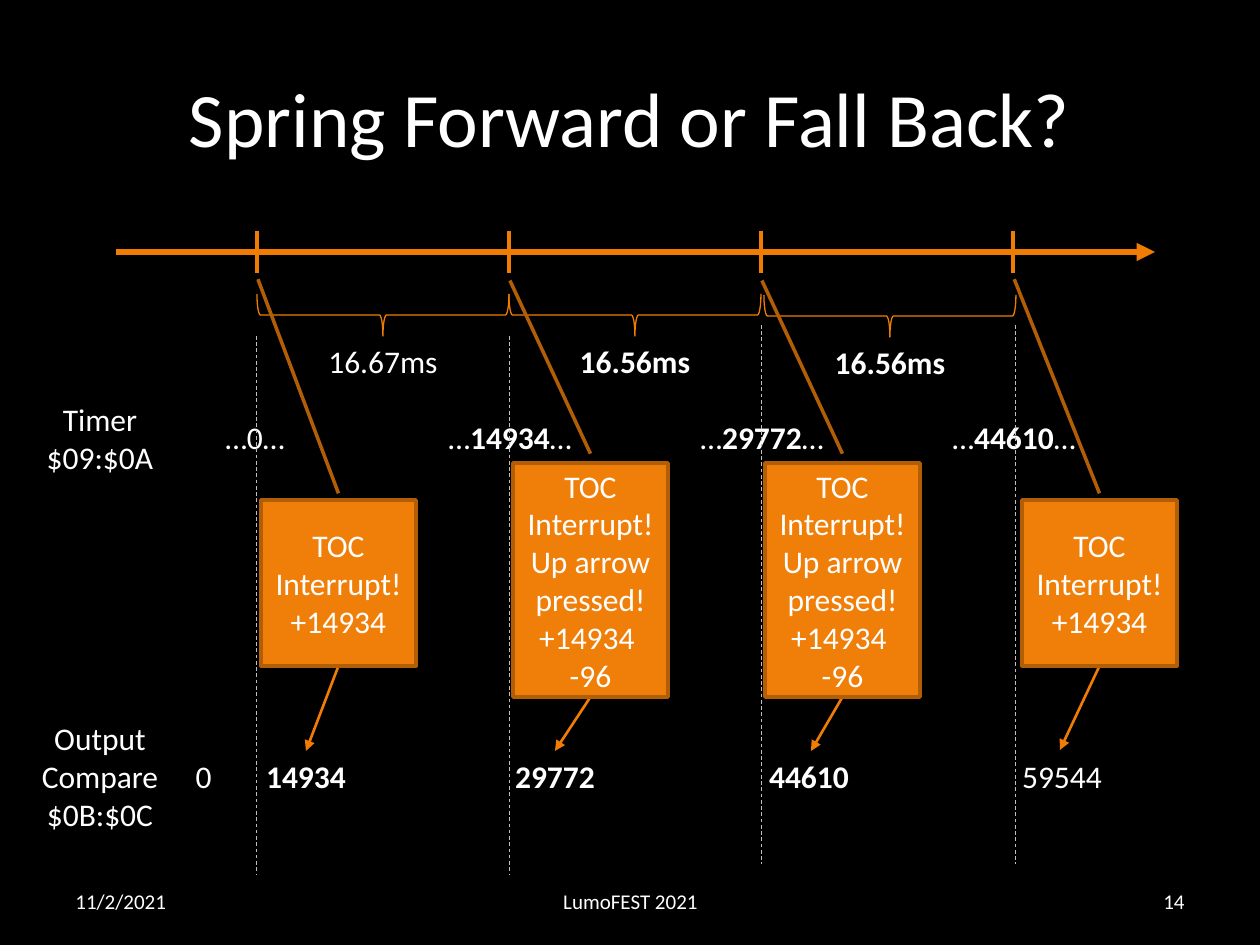
from dataclasses import dataclass

from lxml import etree
from pptx import Presentation
from pptx.dml.color import RGBColor
from pptx.enum.dml import MSO_LINE
from pptx.enum.shapes import MSO_CONNECTOR, MSO_SHAPE
from pptx.enum.text import MSO_ANCHOR, MSO_AUTO_SIZE, PP_ALIGN
from pptx.oxml.ns import qn
from pptx.util import Emu, Pt

STRAIGHT = MSO_CONNECTOR.STRAIGHT
BRACE, CALLOUT = MSO_SHAPE.LEFT_BRACE, MSO_SHAPE.LINE_CALLOUT_1
LEFT, CENTER, RIGHT = PP_ALIGN.LEFT, PP_ALIGN.CENTER, PP_ALIGN.RIGHT
TOP, MIDDLE = MSO_ANCHOR.TOP, MSO_ANCHOR.MIDDLE
DASH, GROW = MSO_LINE.DASH, MSO_AUTO_SIZE.SHAPE_TO_FIT_TEXT

EMU_PER_PX = 914400 // 126
FONT = "Calibri"
BLACK, WHITE, GUIDE_GRAY = "000000", "FFFFFF", "BFBFBF"
ORANGE, BOX_ORANGE, BOX_EDGE = "F07C03", "F07F09", "B25E07"

AXIS_Y = 252
FIRST_TICK, TICK_GAP = 257, 252
LABEL_WIDTH, LABEL_HEIGHT = 158, 50
BOX_WIDTH = 155
SHORT_TEXT = "TOC Interrupt!\v+14934"
LONG_TEXT = "TOC Interrupt! Up arrow pressed!\v+14934 \v-96"


@dataclass
class Interrupt:
    """One timer interrupt: its guide line, callout and register values."""
    guide_x: int
    guide_top: int
    timer: str
    timer_bold: str
    timer_left: int
    box: tuple[int, int, int, int]
    text: str
    leader: tuple[float, float]
    arrow_end: tuple[int, int]
    compare: str
    compare_bold: str
    compare_left: int


@dataclass
class Interval:
    """The time between two interrupts."""
    left: int
    top: int
    text: str
    bold: str


INTERRUPTS = [
    Interrupt(256, 336, "…0…", "", 176, (261, 500, BOX_WIDTH, 166), SHORT_TEXT,
              (-1.33, -0.02), (306, 751), "14934", "14934", 227),
    Interrupt(509, 336, "…14934…", "14934", 431, (513, 463, BOX_WIDTH, 234), LONG_TEXT,
              (-0.78, -0.02), (555, 751), "29772", "29772", 476),
    Interrupt(761, 325, "…29772…", "29772", 683, (765, 463, BOX_WIDTH, 234), LONG_TEXT,
              (-0.78, -0.02), (811, 751), "44610", "44610", 730),
    Interrupt(1016, 325, "…44610…", "44610", 935, (1022, 500, BOX_WIDTH, 166), SHORT_TEXT,
              (-1.33, -0.05), (1060, 750), "59544", "", 983),
]
INTERVALS = [
    Interval(257, 294, "16.67ms", ""),
    Interval(509, 294, "16.56ms", "16.56ms"),
    Interval(764, 295, "16.56ms", "16.56ms"),
]


def px(length: float) -> Emu:
    return Emu(round(length * EMU_PER_PX))


def color(value: str) -> RGBColor:
    return RGBColor.from_string(value)


def format_text(shape, align, size: int = 18) -> None:
    for paragraph in shape.text_frame.paragraphs:
        paragraph.alignment = align
        for run in paragraph.runs:
            run.font.name = FONT
            run.font.size = Pt(size)
            run.font.color.rgb = color(WHITE)


def add_text(slide, left: int, top: int, width: int, height: int, text: str,
             bold: str = "", align=CENTER, size: int = 18, anchor=TOP):
    """Add a text box in which the part given as bold is set in bold."""
    shape = slide.shapes.add_textbox(px(left), px(top), px(width), px(height))
    frame = shape.text_frame
    frame.word_wrap = True
    frame.vertical_anchor = anchor
    if anchor == TOP:
        frame.auto_size = GROW
    if bold:
        for part in filter(None, text.partition(bold)):
            run = frame.paragraphs[0].add_run()
            run.text = part
            run.font.bold = part == bold
    else:
        frame.text = text
    format_text(shape, align, size)
    return shape


def add_line(slide, start: tuple[float, float], end: tuple[float, float], width: float,
             line_color: str = ORANGE, arrow: bool = False, dash=None):
    connector = slide.shapes.add_connector(STRAIGHT, *map(px, (*start, *end)))
    connector.line.color.rgb = color(line_color)
    connector.line.width = Pt(width)
    if dash is not None:
        connector.line.dash_style = dash
    if arrow:
        etree.SubElement(connector.line._get_or_add_ln(), qn("a:tailEnd"), type="triangle")
    etree.SubElement(connector._element.spPr, qn("a:effectLst"))
    return connector


def add_brace(slide, interval: Interval) -> None:
    """Add a brace turned to point down, with the duration below it."""
    depth, span = 42, TICK_GAP
    left = interval.left + (span - depth) / 2
    top = interval.top - (span - depth) / 2
    brace = slide.shapes.add_shape(BRACE, px(left), px(top), px(depth), px(span))
    brace.rotation = 270
    brace.shadow.inherit = False
    brace.fill.background()
    brace.line.color.rgb = color(ORANGE)
    brace.line.width = Pt(0.75)
    add_text(slide, interval.left + (span - LABEL_WIDTH) // 2, interval.top + depth,
             LABEL_WIDTH, LABEL_HEIGHT, interval.text, interval.bold)


def add_callout(slide, interrupt: Interrupt) -> None:
    callout = slide.shapes.add_shape(CALLOUT, *map(px, interrupt.box))
    callout.shadow.inherit = False
    for index, value in enumerate((-0.04, 0.5, *interrupt.leader)):
        callout.adjustments[index] = value
    callout.fill.solid()
    callout.fill.fore_color.rgb = color(BOX_ORANGE)
    callout.line.color.rgb = color(BOX_EDGE)
    callout.line.width = Pt(2)
    callout.text_frame.word_wrap = True
    callout.text_frame.vertical_anchor = MIDDLE
    callout.text_frame.text = interrupt.text
    format_text(callout, CENTER)


def add_interrupt(slide, interrupt: Interrupt) -> None:
    left, top, width, height = interrupt.box
    add_text(slide, interrupt.timer_left, 412, LABEL_WIDTH, LABEL_HEIGHT,
             interrupt.timer, interrupt.timer_bold)
    add_text(slide, interrupt.compare_left, 751, LABEL_WIDTH, LABEL_HEIGHT,
             interrupt.compare, interrupt.compare_bold)
    add_line(slide, (left + width / 2, top + height), interrupt.arrow_end, 1.5, arrow=True)
    add_callout(slide, interrupt)
    add_line(slide, (interrupt.guide_x, interrupt.guide_top),
             (interrupt.guide_x, interrupt.guide_top + 539), 0.5, GUIDE_GRAY, dash=DASH)


def main() -> None:
    presentation = Presentation()
    presentation.slide_width, presentation.slide_height = px(1260), px(945)
    slide = presentation.slides.add_slide(presentation.slide_layouts[6])
    slide.background.fill.solid()
    slide.background.fill.fore_color.rgb = color(BLACK)

    # Title and footer
    add_text(slide, 63, 38, 1134, 157, "Spring Forward or Fall Back?", size=44, anchor=MIDDLE)
    for left, width, text, align in ((63, 294, "11/2/2021", LEFT),
                                     (431, 399, "LumoFEST 2021", CENTER),
                                     (903, 294, "14", RIGHT)):
        add_text(slide, left, 876, width, 50, text, align=align, size=12, anchor=MIDDLE)

    # Time axis with its ticks
    add_line(slide, (116, AXIS_Y), (1155, AXIS_Y), 3.5, arrow=True)
    for index in range(len(INTERRUPTS)):
        tick_x = FIRST_TICK + index * TICK_GAP
        add_line(slide, (tick_x, AXIS_Y - 21), (tick_x, AXIS_Y + 21), 2)

    # Row names and the starting compare value
    add_text(slide, 21, 394, LABEL_WIDTH, 89, "Timer\v$09:$0A")
    add_text(slide, 21, 713, LABEL_WIDTH, 127, "Output Compare\n$0B:$0C")
    add_text(slide, 176, 751, 55, LABEL_HEIGHT, "0")

    # Intervals and interrupts
    for interval in INTERVALS:
        add_brace(slide, interval)
    for interrupt in INTERRUPTS:
        add_interrupt(slide, interrupt)

    presentation.save("out.pptx")


if __name__ == "__main__":
    main()
